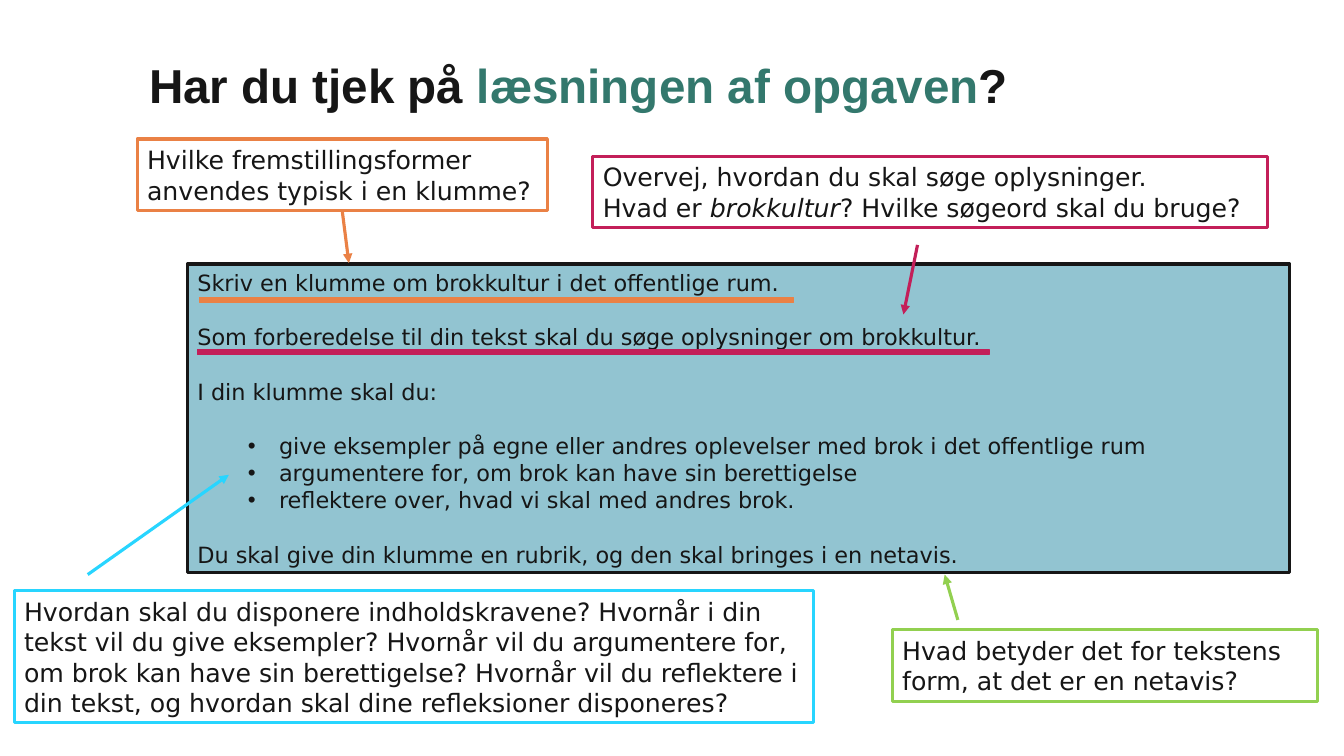
import pptx
import pptx.util
import pptx.dml.color
import pptx.enum.shapes
import pptx.enum.text
import pptx.oxml.ns
import lxml.etree

Pt = pptx.util.Pt
WIDTH, HEIGHT = pptx.util.Inches(13.33), pptx.util.Inches(7.5)
FONT = "DejaVu Sans"
PITCH = 1.21  # line height as a share of the text size
COLORS = {"ink": "161616", "teal": "33786D", "task": "92C4D1", "pink": "C31F59",
          "orange": "EA8145", "cyan": "28D5FF", "green": "92D050"}

INTRO = ["Skriv en klumme om brokkultur i det offentlige rum.",
         "Som forberedelse til din tekst skal du søge oplysninger om brokkultur.",
         "I din klumme skal du:"]
DEMANDS = ["give eksempler på egne eller andres oplevelser med brok i det offentlige rum",
           "argumentere for, om brok kan have sin berettigelse",
           "reflektere over, hvad vi skal med andres brok."]
CLOSING = "Du skal give din klumme en rubrik, og den skal bringes i en netavis."
FORMS = "Hvilke fremstillingsformer anvendes typisk i en klumme?"
PLAN = ("Hvordan skal du disponere indholdskravene? Hvornår i din tekst vil du give "
        "eksempler? Hvornår vil du argumentere for, om brok kan have sin berettigelse? "
        "Hvornår vil du reflektere i din tekst, og hvordan skal dine refleksioner "
        "disponeres?")
PAPER = "Hvad betyder det for tekstens form, at det er en netavis?"


def color(name):
    return pptx.dml.color.RGBColor.from_string(COLORS[name])


def scale(*shares):
    """Turn percentages, across and down by turns, into slide lengths."""
    return [int(share * (HEIGHT if i % 2 else WIDTH) / 100)
            for i, share in enumerate(shares)]


def add_box(slide, area, line, fill=None, weight=2.25):
    box = slide.shapes.add_shape(pptx.enum.shapes.MSO_SHAPE.RECTANGLE, *scale(*area))
    box.shadow.inherit = False
    box.line.color.rgb = color(line)
    box.line.width = Pt(weight)
    if fill:
        box.fill.solid()
        box.fill.fore_color.rgb = color(fill)
    else:
        box.fill.background()
    frame = box.text_frame
    frame.word_wrap = True
    frame.vertical_anchor = pptx.enum.text.MSO_ANCHOR.TOP
    return box


def style(par, size):
    par.alignment = pptx.enum.text.PP_ALIGN.LEFT
    par.line_spacing = Pt(round(size * PITCH, 1))
    par.font.name = FONT
    par.font.size = Pt(size)
    par.font.color.rgb = color("ink")


def add_note(slide, area, line, lines):
    """Add a framed note; each line is a list of runs, every second one italic."""
    box = add_box(slide, area, line)
    frame = box.text_frame
    for i, runs in enumerate(lines):
        par = frame.add_paragraph() if i else frame.paragraphs[0]
        for j, text in enumerate(runs):
            run = par.add_run()
            run.text = text
            if j % 2:
                run.font.italic = True
        style(par, 18)
    return box


def add_bar(slide, area, name):
    add_box(slide, area, name, name, 1)


def add_arrow(slide, ends, name, source=None):
    """Draw an arrow, joined to the bottom of the source box if one is given."""
    arrow = slide.shapes.add_connector(
        pptx.enum.shapes.MSO_CONNECTOR.STRAIGHT, *scale(*ends))
    if source is not None:
        arrow.begin_connect(source, 2)
    arrow.line.color.rgb = color(name)
    arrow.line.width = Pt(2.25)
    qn = pptx.oxml.ns.qn
    lxml.etree.SubElement(arrow.line._get_or_add_ln(), qn("a:tailEnd"), type="triangle")
    lxml.etree.SubElement(arrow._element.spPr, qn("a:effectLst"))


def add_bullet(par):
    props = par._p.get_or_add_pPr()
    props.set("marL", str(pptx.util.Inches(0.81)))
    props.set("indent", str(pptx.util.Inches(-0.31)))
    qn = pptx.oxml.ns.qn
    lxml.etree.SubElement(props, qn("a:buFont"), typeface="Arial")
    lxml.etree.SubElement(props, qn("a:buChar"), char="•")


def add_task(slide):
    frame = add_box(slide, (13.95, 34.93, 82, 40.8), "ink", "task").text_frame
    gap = Pt(round(16 * PITCH, 1))
    for i, text in enumerate(INTRO + DEMANDS + [CLOSING]):
        par = frame.add_paragraph() if i else frame.paragraphs[0]
        par.text = text
        if text in DEMANDS:
            par.level = 1
            add_bullet(par)
        style(par, 16)
        if i and text not in DEMANDS[1:]:
            par.space_before = gap


def set_title(slide):
    title = slide.shapes.title
    title.left, title.top, title.width, title.height = scale(11.1, 8.67, 79.07, 4.93)
    frame = title.text_frame
    frame.margin_left = frame.margin_right = frame.margin_top = frame.margin_bottom = 0
    frame.word_wrap = True
    frame.auto_size = pptx.enum.text.MSO_AUTO_SIZE.NONE
    frame.vertical_anchor = pptx.enum.text.MSO_ANCHOR.TOP
    par = frame.paragraphs[0]
    par.alignment = pptx.enum.text.PP_ALIGN.LEFT
    par.line_spacing = 0.83
    par.font.name = "Arial"
    par.font.size = Pt(34)
    par.font.bold = True
    for text, name in (("Har du tjek på ", "ink"), ("læsningen af opgaven", "teal"),
                       ("?", "ink")):
        run = par.add_run()
        run.text = text
        run.font.color.rgb = color(name)


def main():
    deck = pptx.Presentation()
    deck.slide_width, deck.slide_height = WIDTH, HEIGHT
    slide = deck.slides.add_slide(deck.slide_layouts[5])
    set_title(slide)
    add_task(slide)

    add_note(slide, (44.11, 20.67, 50.19, 9.47), "pink",
             [["Overvej, hvordan du skal søge oplysninger."],
              ["Hvad er ", "brokkultur", "? Hvilke søgeord skal du bruge?"]])
    add_bar(slide, (14.7, 46.27, 58.89, 0.67), "pink")
    add_arrow(slide, (68.27, 32.4, 67.22, 41.6), "pink")

    forms = add_note(slide, (10.2, 18.4, 30.53, 9.47), "orange", [[FORMS]])
    add_bar(slide, (14.85, 39.33, 44.19, 0.67), "orange")
    add_arrow(slide, (25.28, 28, 25.96, 34.8), "orange", forms)

    add_note(slide, (1.05, 78.13, 59.49, 17.47), "cyan", [[PLAN]])
    add_arrow(slide, (6.53, 76, 17.03, 62.8), "cyan")

    add_note(slide, (66.39, 83.33, 31.66, 9.47), "green", [[PAPER]])
    add_arrow(slide, (71.27, 82, 70.29, 76), "green")
    deck.save("out.pptx")


if __name__ == "__main__":
    main()
